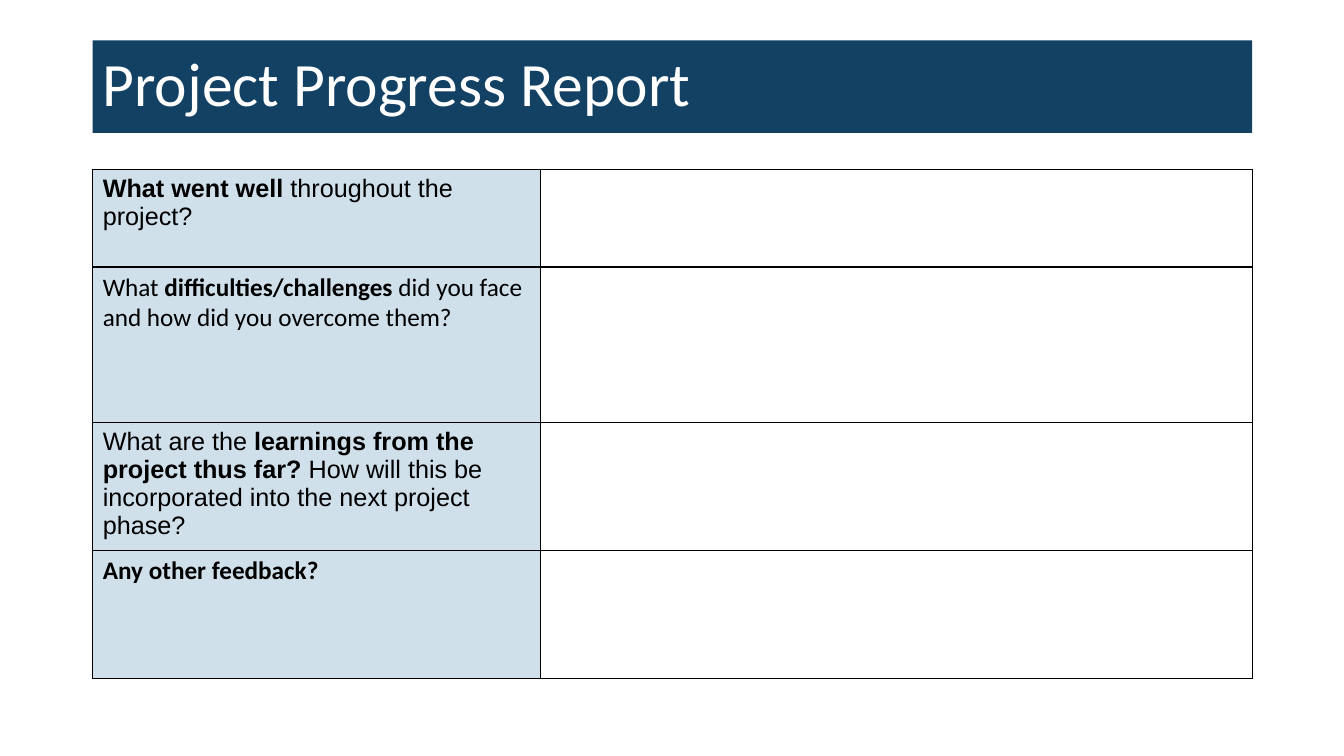
from lxml.etree import SubElement
from pptx import Presentation
from pptx.dml.color import RGBColor
from pptx.enum.shapes import MSO_SHAPE
from pptx.enum.text import MSO_ANCHOR, PP_ALIGN
from pptx.oxml.ns import qn
from pptx.util import Inches, Pt

NAVY = RGBColor(0x13, 0x41, 0x63)
PALE_BLUE = RGBColor(0xCF, 0xE0, 0xEA)
WHITE = RGBColor(0xFF, 0xFF, 0xFF)
BLACK = RGBColor(0x00, 0x00, 0x00)

# Lengths in percent of the slide's width or height
LEFT = 6.9
COLUMNS = [33.31, 52.96]
ROWS = [12.93, 20.53, 16.93, 16.93]

# Each question: font, then (text, bold) spans
QUESTIONS = [
    ("Arial", [("What went well ", True), ("throughout the project?", False)]),
    ("Calibri", [("What ", False), ("difficulties/challenges", True),
                 (" did you face and how did you overcome them?", False)]),
    ("Arial", [("What are the ", False),
               ("learnings from the project thus far?", True),
               (" How will this be incorporated into the next project phase?", False)]),
    ("Calibri", [("Any other feedback?", True)]),
]


class ReportSlide:
    title_size = Pt(44)
    body_size = Pt(18)
    border_width = Pt(1)

    def __init__(self, deck):
        self.width, self.height = deck.slide_width, deck.slide_height
        self.page = deck.slides.add_slide(deck.slide_layouts[6])

    def across(self, percent):
        return round(self.width * percent / 100)

    def down(self, percent):
        return round(self.height * percent / 100)

    def style(self, span, font, size, color, bold=False):
        span.font.name, span.font.size, span.font.bold = font, size, bold
        span.font.color.rgb = color

    def banner(self, text, top, height):
        box = self.page.shapes.add_shape(
            MSO_SHAPE.RECTANGLE, self.across(LEFT), self.down(top),
            self.across(sum(COLUMNS)), self.down(height))
        box.shadow.inherit = False
        box.fill.solid()
        box.fill.fore_color.rgb = NAVY
        box.line.fill.background()
        frame = box.text_frame
        frame.word_wrap = True
        frame.vertical_anchor = MSO_ANCHOR.MIDDLE
        frame.text = text
        para = frame.paragraphs[0]
        para.alignment = PP_ALIGN.LEFT
        para.line_spacing = 0.9
        self.style(para.runs[0], "Calibri", self.title_size, WHITE)

    def border(self, cell):
        properties = cell._tc.get_or_add_tcPr()
        for side in ("a:lnL", "a:lnR", "a:lnT", "a:lnB"):
            line = SubElement(properties, qn(side), w=str(self.border_width))
            fill = SubElement(line, qn("a:solidFill"))
            SubElement(fill, qn("a:srgbClr"), val=str(BLACK))

    def question_table(self, questions, top):
        table = self.page.shapes.add_table(
            len(ROWS), len(COLUMNS), self.across(LEFT), self.down(top),
            self.across(sum(COLUMNS)), self.down(sum(ROWS))).table
        table.first_row = table.horz_banding = False
        for column, width in zip(table.columns, COLUMNS):
            column.width = self.across(width)
        for row, height in zip(table.rows, ROWS):
            row.height = self.down(height)
        for cell in table.iter_cells():
            self.border(cell)
            cell.fill.background()

        # Questions on the left, answers left open
        for index, (font, spans) in enumerate(questions):
            cell = table.cell(index, 0)
            cell.fill.solid()
            cell.fill.fore_color.rgb = PALE_BLUE
            para = cell.text_frame.paragraphs[0]
            for text, bold in spans:
                span = para.add_run()
                span.text = text
                self.style(span, font, self.body_size, BLACK, bold)


def main():
    deck = Presentation()
    deck.slide_width, deck.slide_height = Inches(13.33), Inches(7.5)
    report = ReportSlide(deck)
    report.banner("Project Progress Report", top=5.33, height=12.27)
    report.question_table(QUESTIONS, top=22.4)
    deck.save("out.pptx")


if __name__ == "__main__":
    main()
